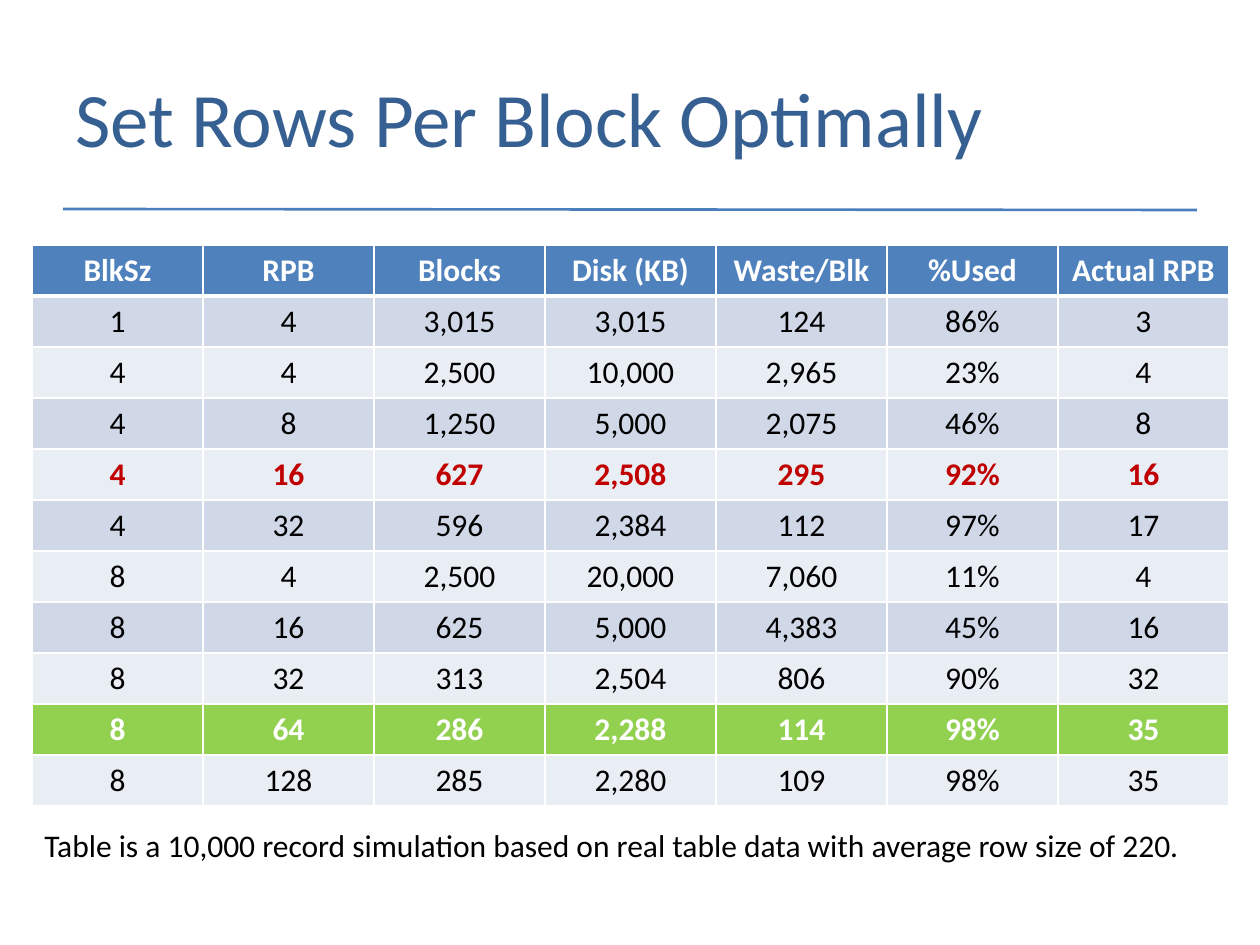
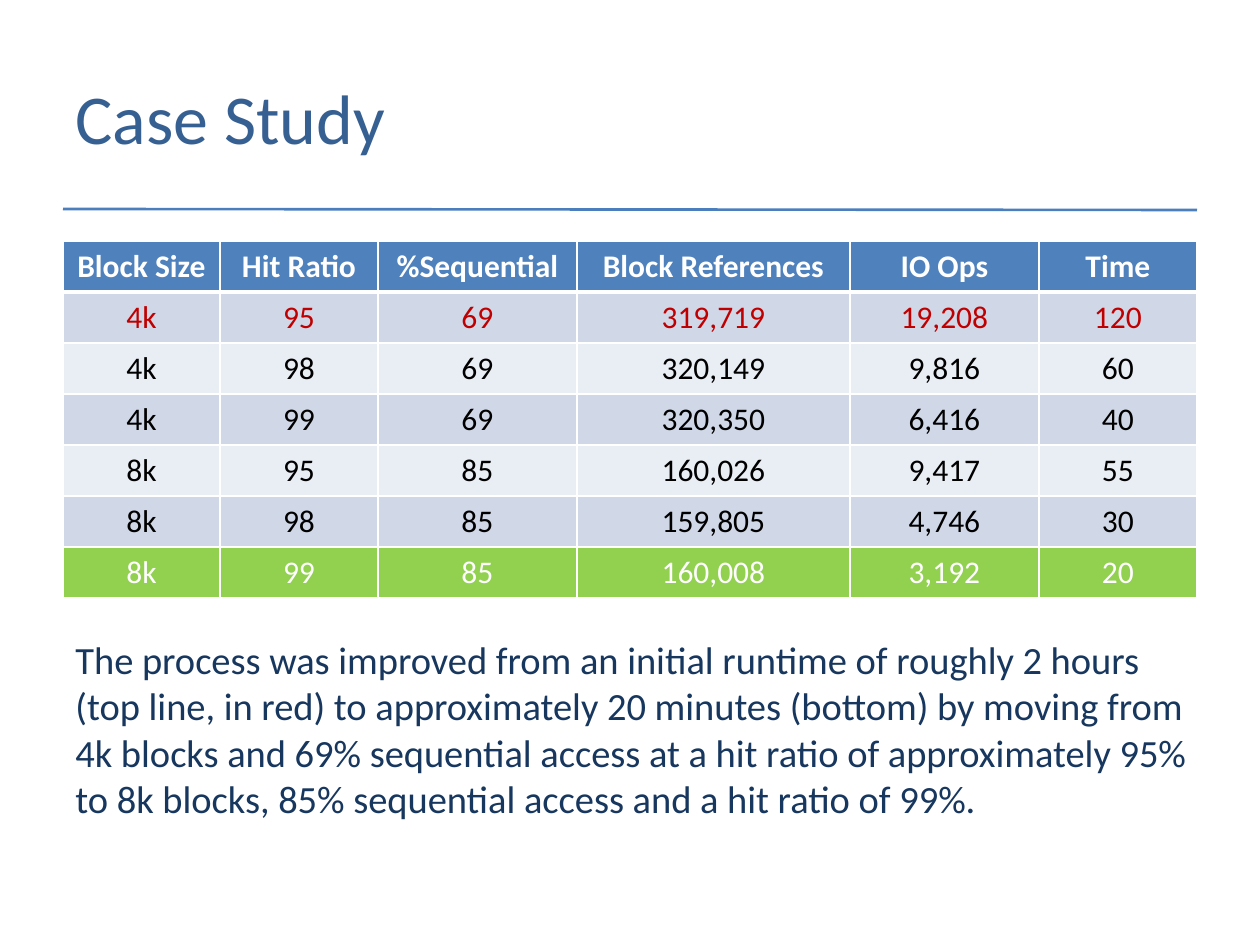
import pptx
import pptx.util
import pptx.dml.color
import pptx.enum.shapes
import pptx.enum.text
import pptx.oxml
import pptx.oxml.ns

RGBColor = pptx.dml.color.RGBColor
PX = 914400 / 126
FONT = "Calibri"

WHITE = RGBColor(0xFF, 0xFF, 0xFF)
BLACK = RGBColor(0x00, 0x00, 0x00)
TITLE_BLUE = RGBColor(0x37, 0x60, 0x92)
RULE_BLUE = RGBColor(0x4B, 0x7E, 0xBC)
HEADER_BLUE = RGBColor(0x4F, 0x81, 0xBD)
TEXT_NAVY = RGBColor(0x17, 0x37, 0x5E)
BAND_DARK = RGBColor(0xD0, 0xD8, 0xE8)
BAND_LIGHT = RGBColor(0xE9, 0xED, 0xF4)
RED = RGBColor(0xC0, 0x00, 0x00)
GREEN = RGBColor(0x92, 0xD0, 0x50)

ROW_HEIGHT = 51

BLOCK_TABLE = [
    "BlkSz|RPB|Blocks|Disk (KB)|Waste/Blk|%Used|Actual RPB",
    "1|4|3,015|3,015|124|86%|3",
    "4|4|2,500|10,000|2,965|23%|4",
    "4|8|1,250|5,000|2,075|46%|8",
    "4|16|627|2,508|295|92%|16",
    "4|32|596|2,384|112|97%|17",
    "8|4|2,500|20,000|7,060|11%|4",
    "8|16|625|5,000|4,383|45%|16",
    "8|32|313|2,504|806|90%|32",
    "8|64|286|2,288|114|98%|35",
    "8|128|285|2,280|109|98%|35",
]
CASE_TABLE = [
    "Block Size|Hit Ratio|%Sequential|Block References|IO Ops|Time",
    "4k|95|69|319,719|19,208|120",
    "4k|98|69|320,149|9,816|60",
    "4k|99|69|320,350|6,416|40",
    "8k|95|85|160,026|9,417|55",
    "8k|98|85|159,805|4,746|30",
    "8k|99|85|160,008|3,192|20",
]
CASE_SUMMARY = (
    "The process was improved from an initial runtime of roughly 2 hours "
    "(top line, in red) to approximately 20 minutes (bottom) by moving from "
    "4k blocks and 69% sequential access at a hit ratio of approximately 95% "
    "to 8k blocks, 85% sequential access and a hit ratio of 99%."
)


def px(*lengths):
    return [pptx.util.Emu(round(length * PX)) for length in lengths]


def add_xml(parent, tag, content="", attributes=""):
    parent.append(pptx.oxml.parse_xml(
        f'<a:{tag} {pptx.oxml.ns.nsdecls("a")} {attributes}>{content}</a:{tag}>'))


class Deck:
    def __init__(self):
        self.presentation = pptx.Presentation()
        self.presentation.slide_width, self.presentation.slide_height = px(1260, 945)
        self.slide = None

    def start_slide(self, title, title_size):
        self.slide = self.presentation.slides.add_slide(
            self.presentation.slide_layouts[6])
        self.rule(63, 209, 1197, 210)
        self.text(title, 63, 38, 987, 158, title_size, TITLE_BLUE,
                  vertical_anchor=pptx.enum.text.MSO_ANCHOR.MIDDLE)

    def rule(self, *ends):
        rule = self.slide.shapes.add_connector(
            pptx.enum.shapes.MSO_CONNECTOR.STRAIGHT, *px(*ends))
        rule.line.color.rgb = RULE_BLUE
        rule.line.width = pptx.util.Pt(1.5)
        add_xml(rule._element.spPr, "effectLst")

    def add_words(self, paragraph, words, size, color, bold=False):
        run = paragraph.add_run()
        run.text = words
        run.font.color.rgb = color
        style = {"name": FONT, "size": pptx.util.Pt(size), "bold": bold}
        for key, value in style.items():
            setattr(run.font, key, value)

    def text(self, words, left, top, width, height, size, color, **frame_format):
        frame = self.slide.shapes.add_textbox(
            *px(left, top, width, height)).text_frame
        for key, value in {"word_wrap": True, **frame_format}.items():
            setattr(frame, key, value)
        self.add_words(frame.paragraphs[0], words, size, color)

    def cell(self, cell, words, fill, color, bold, top_border, bottom_border):
        borders = {"lnL": 1, "lnR": 1, "lnT": top_border, "lnB": bottom_border}
        for tag, points in borders.items():
            add_xml(cell._tc.get_or_add_tcPr(), tag,
                    f'<a:solidFill><a:srgbClr val="{WHITE}"/></a:solidFill>',
                    f'w="{pptx.util.Pt(points)}"')
        cell.fill.solid()
        cell.fill.fore_color.rgb = fill
        paragraph = cell.text_frame.paragraphs[0]
        paragraph.alignment = pptx.enum.text.PP_ALIGN.CENTER
        self.add_words(paragraph, words, 18, color, bold)

    def table(self, lines, left, top, widths, red_row, green_row, bold_marks):
        """Draw a banded table with one red row and one green row."""
        table = self.slide.shapes.add_table(
            len(lines), len(widths),
            *px(left, top, sum(widths), ROW_HEIGHT * len(lines))).table
        for column, width in zip(table.columns, px(*widths)):
            column.width = width
        for row in table.rows:
            row.height = px(ROW_HEIGHT)[0]
        marks = {0: (HEADER_BLUE, WHITE, True),
                 green_row: (GREEN, WHITE, bold_marks)}
        for index, line in enumerate(lines):
            band = BAND_DARK if index % 2 else BAND_LIGHT
            plain = (band, RED, bold_marks) if index == red_row else (band, BLACK, False)
            look = marks.get(index, plain)
            borders = (3 if index == 1 else 1, 3 if index == 0 else 1)
            for column, words in enumerate(line.split("|")):
                self.cell(table.cell(index, column), words, *look, *borders)


def main():
    deck = Deck()

    deck.start_slide("Set Rows Per Block Optimally", 44)
    deck.table(BLOCK_TABLE, 32, 245, [171] * 7,
               red_row=4, green_row=9, bold_marks=True)
    deck.text("Table is a 10,000 record simulation based on real table data "
              "with average row size of 220.",
              32, 820, 1174, 50, 18, BLACK, word_wrap=False)

    deck.start_slide("Case Study", 40)
    deck.table(CASE_TABLE, 63, 241, [157, 158, 199, 273, 189, 158],
               red_row=1, green_row=6, bold_marks=False)
    deck.text(CASE_SUMMARY, 63, 630, 1155, 199, 22, TEXT_NAVY)

    deck.presentation.save("out.pptx")


if __name__ == "__main__":
    main()
